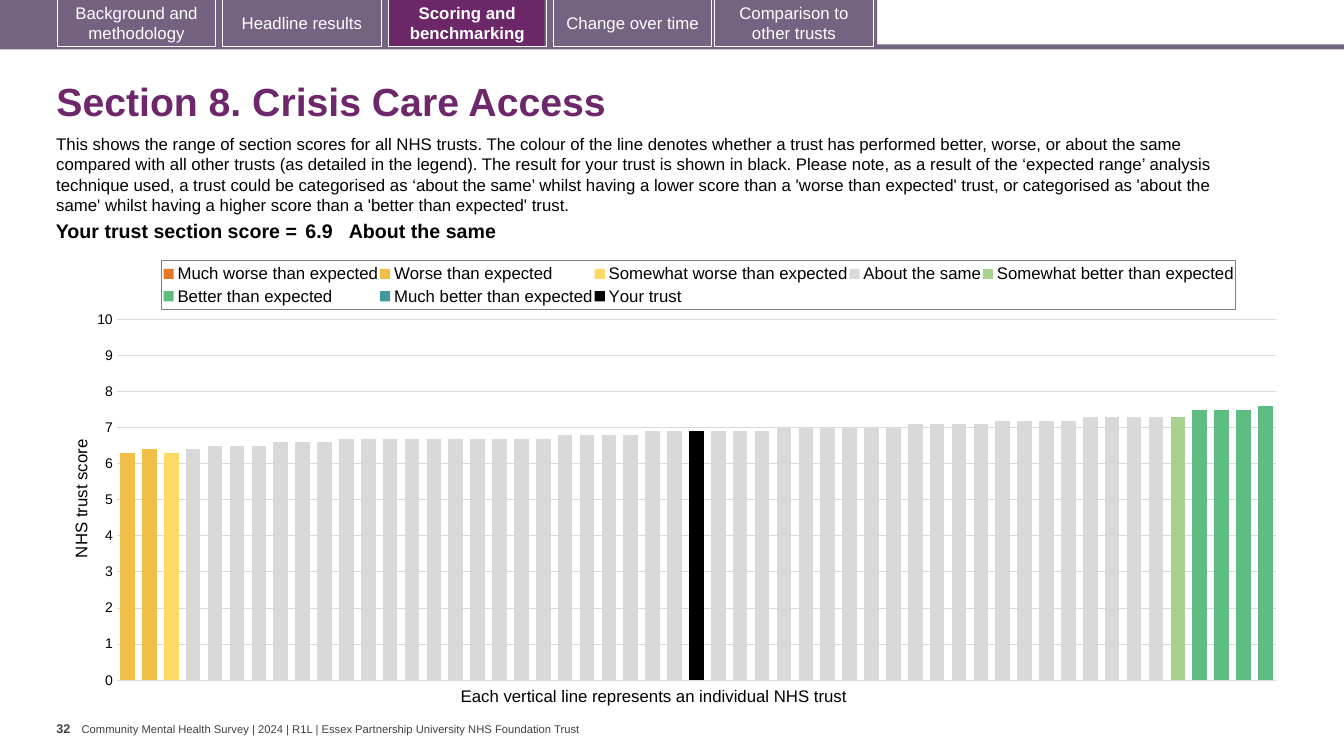
from copy import deepcopy
from dataclasses import dataclass

from lxml import etree
from pptx import Presentation
from pptx import util as u
from pptx.chart.data import CategoryChartData
from pptx.dml.color import RGBColor
from pptx.enum import chart as charts, shapes, text
from pptx.oxml.ns import qn

PX = 9144  # EMU per px, 100 px to the inch
TRUSTS = 53
COLORS = {
    "bar": "756382", "tab": "746280", "active": "6B2768", "title": "6D276A", "white": "FFFFFF",
    "black": "000000", "footer": "404040", "grid": "D9D9D9", "border": "7F7F7F",
    "much_worse": "E87722", "worse": "F1BE48", "somewhat_worse": "FFD966", "same": "D9D9D9",
    "somewhat_better": "A9D18E", "better": "5FBD83", "much_better": "419999",
}


@dataclass
class Style:
    size: float
    color: str = "black"
    bold: bool = False


@dataclass
class Tab:
    label: str
    left: int
    fill: str | None
    bold: bool = False


@dataclass
class Label:
    text: str
    box: tuple[int, int, int, int]
    style: Style
    insets: tuple[int, int] = (10, 5)
    wrap: bool = False
    middle: bool = False


@dataclass
class Band:
    name: str
    color: str
    first: int = 0
    scores: tuple[float, ...] = ()


BARS = [((0, 44, 1333, 5), "bar"), ((0, 0, 870, 47), "bar"),
        ((59, 0, 154, 46), "tab"), ((386, 0, 154, 46), "active")]
TABS = [
    Tab("Background and methodology", 57, "tab"),
    Tab("Headline results", 221, None),
    Tab("Scoring and benchmarking", 385, None, True),
    Tab("Change over time", 549, "bar"),
    Tab("Comparison to other trusts", 709, "bar"),
]
INTRO = (
    "This shows the range of section scores for all NHS trusts. The colour of the line denotes "
    "whether a trust has performed better, worse, or about the same compared with all other trusts "
    "(as detailed in the legend). The result for your trust is shown in black. Please note, as a "
    "result of the ‘expected range’ analysis technique used, a trust could be categorised as ‘about "
    "the same’ whilst having a lower score than a 'worse than expected' trust, or categorised as "
    "'about the same' whilst having a higher score than a 'better than expected' trust."
)
FOOTER = "Community Mental Health Survey | 2024 | R1L | Essex Partnership University NHS Foundation Trust"
LABELS = [
    Label(FOOTER, (81, 717, 501, 13), Style(8, "footer"), (0, 0), middle=True),
    Label("32", (56, 710, 25, 40), Style(9, "footer", True), (0, 5)),
    Label(INTRO, (46, 128, 1213, 91), Style(12), wrap=True),
    Label("Each vertical line represents an individual NHS trust", (447, 675, 411, 30), Style(12)),
]
SAME_SCORES = (6.4, *[6.5] * 3, *[6.6] * 3, *[6.7] * 10, *[6.8] * 4, *[6.9] * 6,
               *[7.0] * 6, *[7.1] * 4, *[7.2] * 4, *[7.3] * 4)
BANDS = [
    Band("Much worse than expected", "much_worse"),
    Band("Worse than expected", "worse", 0, (6.3, 6.4)),
    Band("Somewhat worse than expected", "somewhat_worse", 2, (6.3,)),
    Band("About the same", "same", 3, SAME_SCORES),
    Band("Somewhat better than expected", "somewhat_better", 48, (7.3,)),
    Band("Better than expected", "better", 49, (7.5, 7.5, 7.5, 7.6)),
    Band("Much better than expected", "much_better"),
    Band("Your trust", "black", 26, (6.9,)),
]
SCORE_CELLS = [("Your trust section score =", 263, 4), ("6.9", 47, 4), ("About the same", 859, 0)]


def emu(*lengths: int) -> list[int]:
    return [length * PX for length in lengths]


def set_font(font, style: Style) -> None:
    font.name, font.size, font.bold = "Arial", u.Pt(style.size), style.bold
    font.color.rgb = RGBColor.from_string(COLORS[style.color])


def write(tf, content: str, style: Style, align=text.PP_ALIGN.LEFT) -> None:
    tf.text = content
    tf.paragraphs[0].alignment = align
    set_font(tf.paragraphs[0].runs[0].font, style)


def paint(fill, color: str | None) -> None:
    if color:
        fill.solid()
        fill.fore_color.rgb = RGBColor.from_string(COLORS[color])
    else:
        fill.background()


def add_rect(s, box: tuple[int, int, int, int], fill: str | None, line: str | None = None):
    sp = s.shapes.add_shape(shapes.MSO_SHAPE.RECTANGLE, *emu(*box))
    sp.shadow.inherit = False
    paint(sp.fill, fill)
    paint(sp.line.fill, line)
    return sp


def add_tab(s, tab: Tab) -> None:
    sp = add_rect(s, (tab.left, -1, 157, 47), tab.fill, "white")
    sp.line.width = u.Pt(0.75)
    sp.text_frame.word_wrap = True
    sp.text_frame.vertical_anchor = text.MSO_ANCHOR.MIDDLE
    write(sp.text_frame, tab.label, Style(12, "white", tab.bold), text.PP_ALIGN.CENTER)


def add_label(s, label: Label) -> None:
    tf = s.shapes.add_textbox(*emu(*label.box)).text_frame
    tf.margin_left = tf.margin_right = label.insets[0] * PX
    tf.margin_top = tf.margin_bottom = label.insets[1] * PX
    tf.word_wrap = label.wrap
    tf.vertical_anchor = text.MSO_ANCHOR.MIDDLE if label.middle else text.MSO_ANCHOR.TOP
    write(tf, label.text, label.style)


def place(element, index: int, target: dict[str, str], **fractions: float) -> None:
    """Give a chart part a manual layout in fractions of the chart."""
    for old in element.findall(qn("c:layout")):
        element.remove(old)
    layout = etree.Element(qn("c:layout"))
    manual = etree.SubElement(layout, qn("c:manualLayout"))
    for tag, value in (target | {"xMode": "edge", "yMode": "edge"} | fractions).items():
        etree.SubElement(manual, qn(f"c:{tag}")).set("val", str(value))
    element.insert(index, layout)


def move_last_to_right_axis(area) -> None:
    """Put the last series on a second, unlabelled value axis."""
    bars, cat, val = (area.find(qn(f"c:{tag}")) for tag in ("barChart", "catAx", "valAx"))
    bars2, cat2, val2 = (deepcopy(part) for part in (bars, cat, val))
    bars.remove(bars.findall(qn("c:ser"))[-1])
    for ser in bars2.findall(qn("c:ser"))[:-1]:
        bars2.remove(ser)
    ids = {cat.find(qn("c:axId")).get("val"): "5001", val.find(qn("c:axId")).get("val"): "5002"}
    for part in (bars2, cat2, val2):
        for ref in part.findall(qn("c:axId")) + part.findall(qn("c:crossAx")):
            ref.set("val", ids[ref.get("val")])
    for tag in ("majorGridlines", "title"):
        val2.remove(val2.find(qn(f"c:{tag}")))
    for tag, value in (("axPos", "r"), ("tickLblPos", "none"), ("crosses", "max")):
        val2.find(qn(f"c:{tag}")).set("val", value)
    bars.addnext(bars2)
    val.addnext(val2)
    val2.addnext(cat2)


def add_score_chart(s, box: tuple[int, int, int, int]) -> None:
    data = CategoryChartData()
    data.categories = [str(n + 1) for n in range(TRUSTS)]
    for band in BANDS:
        after = TRUSTS - band.first - len(band.scores)
        data.add_series(band.name, [None] * band.first + list(band.scores) + [None] * after)
    chart = s.shapes.add_chart(charts.XL_CHART_TYPE.COLUMN_CLUSTERED, *emu(*box), data).chart
    set_font(chart.font, Style(10))
    chart.has_title = False
    plot = chart.plots[0]
    plot.gap_width, plot.overlap, plot.vary_by_categories = 50, 100, False
    for series, band in zip(plot.series, BANDS):
        paint(series.format.fill, band.color)
    area = chart._chartSpace.chart.plotArea
    place(area, 0, {"layoutTarget": "inner"}, x=0.04, y=0.158, w=0.946, h=0.808)
    # Axes
    chart.category_axis.visible = False
    axis = chart.value_axis
    axis.minimum_scale, axis.maximum_scale, axis.major_unit = 0, 10, 1
    axis.major_tick_mark = charts.XL_TICK_MARK.NONE
    paint(axis.format.line.fill, None)
    paint(axis.major_gridlines.format.line.fill, "grid")
    axis.major_gridlines.format.line.width = u.Pt(0.75)
    set_font(axis.tick_labels.font, Style(10))
    write(axis.axis_title.text_frame, "NHS trust score", Style(12))
    place(axis.axis_title._element, 1, {}, x=0, y=0.42)
    move_last_to_right_axis(area)
    # Legend
    chart.has_legend = True
    legend = chart.legend
    legend.position = charts.XL_LEGEND_POSITION.TOP
    legend.include_in_layout = False
    set_font(legend.font, Style(12))
    place(legend._element, 1, {}, x=0.077, y=0.026, w=0.876, h=0.11)
    border = etree.Element(qn("c:spPr"))
    fill = etree.SubElement(etree.SubElement(border, qn("a:ln"), w="9525"), qn("a:solidFill"))
    etree.SubElement(fill, qn("a:srgbClr"), val=COLORS["border"])
    legend._element.find(qn("c:txPr")).addprevious(border)


def add_score_table(s, box: tuple[int, int, int, int]) -> None:
    table = s.shapes.add_table(1, len(SCORE_CELLS), *emu(*box)).table
    table.first_row = table.horz_banding = False
    for i, (content, width, inset) in enumerate(SCORE_CELLS):
        table.columns[i].width = width * PX
        cell = table.cell(0, i)
        cell.fill.background()
        cell.margin_left = cell.margin_right = inset * PX
        cell.margin_top = cell.margin_bottom = 4 * PX
        align = text.PP_ALIGN.LEFT if i else text.PP_ALIGN.RIGHT
        write(cell.text_frame, content, Style(14, bold=True), align)


def main() -> None:
    prs = Presentation()
    prs.slide_width, prs.slide_height = emu(1333, 750)
    s = prs.slides.add_slide(prs.slide_layouts[5])
    # Navigation
    for box, color in BARS:
        add_rect(s, box, color)
    for tab in TABS:
        add_tab(s, tab)
    # Title
    title = s.shapes.title
    title.left, title.top, title.width, title.height = emu(46, 67, 1249, 72)
    title.text_frame.vertical_anchor = text.MSO_ANCHOR.MIDDLE
    write(title.text_frame, "Section 8. Crisis Care Access", Style(28, "title", True))
    title.text_frame.paragraphs[0].line_spacing = 0.9
    # Content
    add_score_chart(s, (67, 247, 1216, 443))
    add_score_table(s, (36, 215, 1169, 22))
    for label in LABELS:
        add_label(s, label)
    prs.save("out.pptx")


if __name__ == "__main__":
    main()
